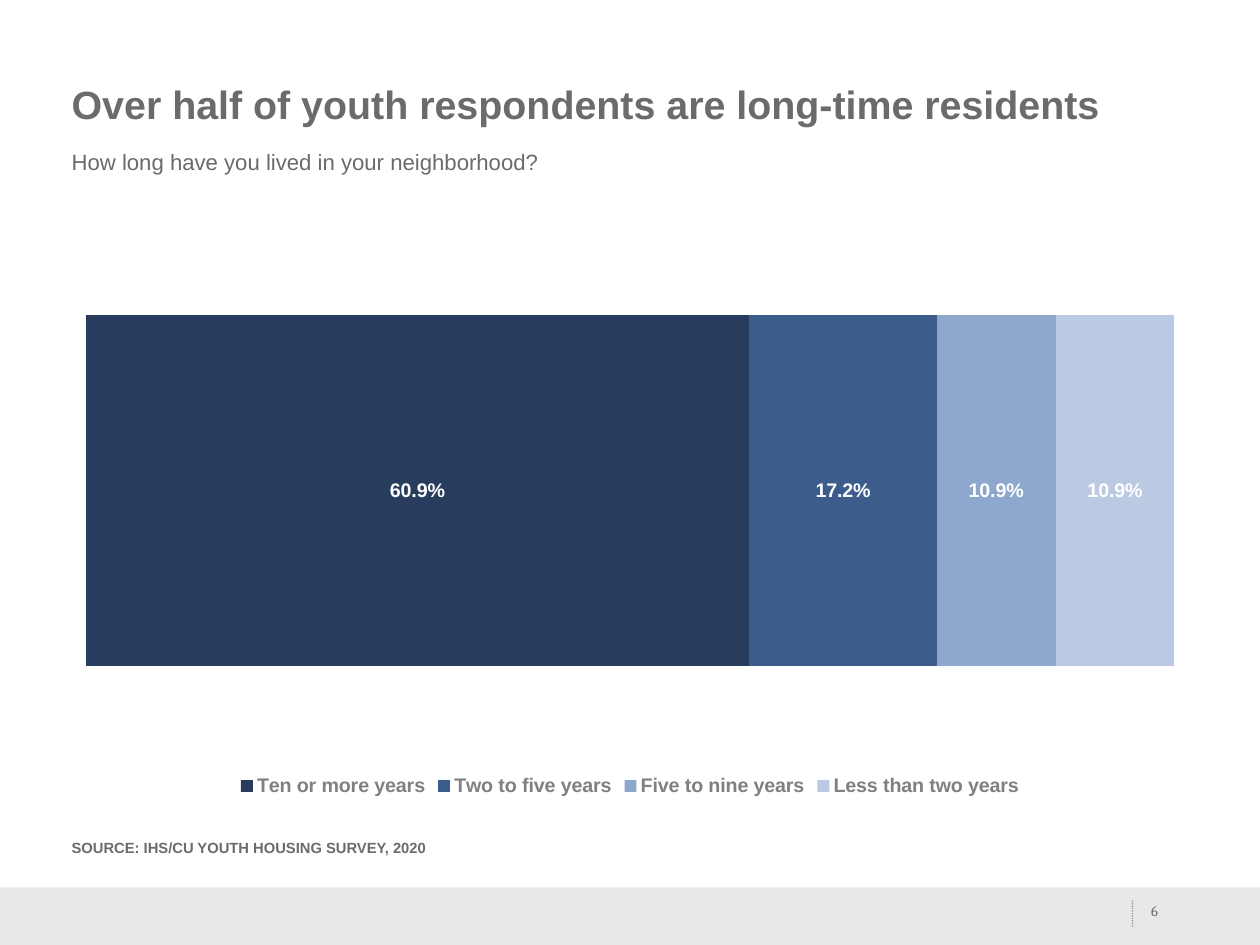
from lxml.etree import SubElement
from pptx import Presentation
from pptx.chart.data import CategoryChartData
from pptx.dml.color import RGBColor
from pptx.enum.chart import XL_CHART_TYPE, XL_LABEL_POSITION, XL_LEGEND_POSITION
from pptx.enum.dml import MSO_LINE
from pptx.enum.shapes import MSO_CONNECTOR, MSO_SHAPE
from pptx.enum.text import MSO_ANCHOR, PP_ALIGN
from pptx.oxml.ns import qn
from pptx.util import Pt

EMU_PER_PX = 9144
COLORS = {
    "text": "6B6B6B",
    "footer": "E8E8E8",
    "legend": "808080",
    "label": "FFFFFF",
    "Ten or more years": "283D5D",
    "Two to five years": "3C5C8C",
    "Five to nine years": "8DA7CD",
    "Less than two years": "BBCAE2",
}
RESIDENCE_SHARES = {
    "Ten or more years": 0.609,
    "Two to five years": 0.172,
    "Five to nine years": 0.109,
    "Less than two years": 0.109,
}


def px(*lengths):
    return [length * EMU_PER_PX for length in lengths]


class SlideBuilder:
    font_name = "Arial"

    def __init__(self, slide):
        self.slide = slide

    def color(self, name):
        return RGBColor.from_string(COLORS[name])

    def style(self, font, size, color="text", bold=False, name=None):
        font.name = name or self.font_name
        font.size = Pt(size)
        font.bold = bold
        font.color.rgb = self.color(color)

    def rectangle(self, box, color):
        shape = self.slide.shapes.add_shape(MSO_SHAPE.RECTANGLE, *px(*box))
        shape.shadow.inherit = False
        shape.fill.solid()
        shape.fill.fore_color.rgb = self.color(color)
        shape.line.fill.background()

    def dotted_line(self, ends, color, opacity):
        connector = self.slide.shapes.add_connector(MSO_CONNECTOR.STRAIGHT, *px(*ends))
        connector.line.color.rgb = self.color(color)
        connector.line.width = Pt(1)
        connector.line.dash_style = MSO_LINE.ROUND_DOT
        properties = connector._element.spPr
        alpha = SubElement(next(properties.iter(qn("a:srgbClr"))), qn("a:alpha"))
        alpha.set("val", str(opacity * 1000))
        SubElement(properties, qn("a:effectLst"))

    def text(self, box, content, size, bold=False, name=None, anchor=MSO_ANCHOR.TOP,
             align=PP_ALIGN.LEFT, spacing=1.0, insets=(10, 5)):
        shape = self.slide.shapes.add_textbox(*px(*box))
        frame = shape.text_frame
        frame.word_wrap = True
        frame.vertical_anchor = anchor
        frame.margin_left = frame.margin_right = insets[0] * EMU_PER_PX
        frame.margin_top = frame.margin_bottom = insets[1] * EMU_PER_PX
        paragraph = frame.paragraphs[0]
        paragraph.alignment = align
        paragraph.line_spacing = spacing
        run = paragraph.add_run()
        run.text = content
        self.style(run.font, size, bold=bold, name=name)

    def stacked_bar(self, box, shares):
        data = CategoryChartData(number_format="0.0%")
        data.categories = ["1"]
        for answer, share in shares.items():
            data.add_series(answer, [share])
        chart = self.slide.shapes.add_chart(
            XL_CHART_TYPE.BAR_STACKED_100, *px(*box), data).chart
        self.style(chart.font, 10)
        chart.has_title = False
        for axis in (chart.category_axis, chart.value_axis):
            axis.visible = False
            axis.has_major_gridlines = False
        chart.has_legend = True
        chart.legend.position = XL_LEGEND_POSITION.BOTTOM
        chart.legend.include_in_layout = False
        self.style(chart.legend.font, 16, "legend", bold=True)
        plot = chart.plots[0]
        plot.gap_width = 50
        plot.overlap = 100
        plot.vary_by_categories = False
        for series in plot.series:
            series.format.fill.solid()
            series.format.fill.fore_color.rgb = self.color(series.name)
            labels = series.data_labels
            labels.show_value = True
            labels.number_format = "0.0%"
            labels.number_format_is_linked = False
            labels.position = XL_LABEL_POSITION.CENTER
            self.style(labels.font, 16, "label", bold=True)


def main():
    presentation = Presentation()
    presentation.slide_width, presentation.slide_height = px(1422, 1067)
    builder = SlideBuilder(presentation.slides.add_slide(presentation.slide_layouts[6]))
    builder.rectangle((0, 1002, 1422, 65), "footer")
    builder.dotted_line((1278, 1017, 1278, 1046), "text", 75)
    builder.text((1285, 981, 36, 57), "6", 12, name="Cambria", anchor=MSO_ANCHOR.BOTTOM,
                 align=PP_ALIGN.CENTER, spacing=1.5, insets=(0, 0))
    builder.text((71, 942, 1351, 60), "SOURCE: IHS/CU YOUTH HOUSING SURVEY, 2020", 12, bold=True)
    builder.text((71, 80, 1280, 74), "Over half of youth respondents are long-time residents",
                 32, bold=True, anchor=MSO_ANCHOR.MIDDLE)
    builder.text((71, 163, 1280, 58), "How long have you lived in your neighborhood?", 18)
    builder.stacked_bar((71, 244, 1280, 660), RESIDENCE_SHARES)
    presentation.save("out.pptx")


if __name__ == "__main__":
    main()
